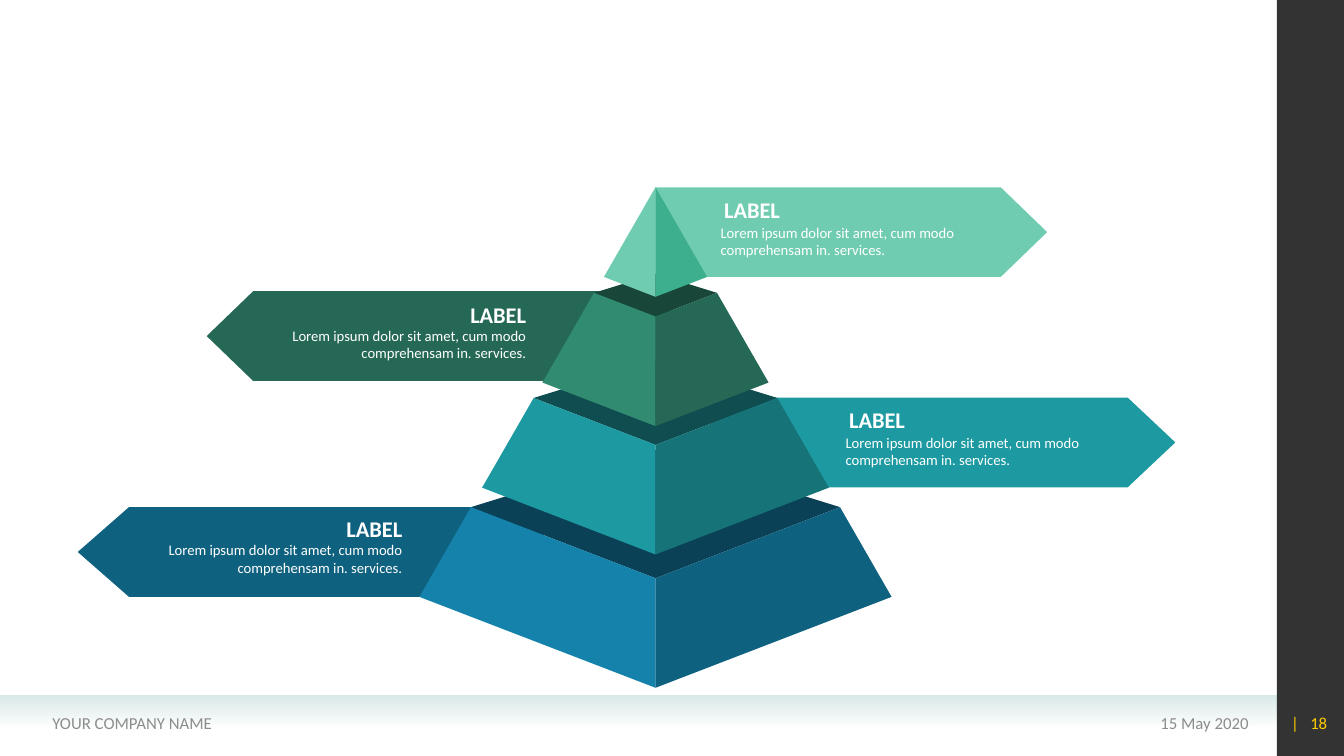
from lxml.etree import SubElement
from pptx import Presentation
from pptx.dml.color import RGBColor
from pptx.enum.shapes import MSO_SHAPE as Preset
from pptx.enum.text import MSO_ANCHOR as Anchor, PP_ALIGN as Align
from pptx.oxml.ns import qn
from pptx.util import Cm, Pt

WHITE = RGBColor(0xFF, 0xFF, 0xFF)
BLACK = RGBColor(0x00, 0x00, 0x00)
MIST = RGBColor(0xD9, 0xE9, 0xE8)
GREY = RGBColor(0x8C, 0x8C, 0x8C)
YELLOW = RGBColor(0xFF, 0xCC, 0x00)
MINT = RGBColor(0x70, 0xCC, 0xB1)
DEEP_MINT = RGBColor(0x3E, 0xAF, 0x8E)
GREEN = RGBColor(0x31, 0x8B, 0x71)
DEEP_GREEN = RGBColor(0x25, 0x68, 0x55)
DARK_GREEN = RGBColor(0x18, 0x46, 0x39)
TEAL = RGBColor(0x1D, 0x9A, 0xA1)
DEEP_TEAL = RGBColor(0x16, 0x74, 0x79)
DARK_TEAL = RGBColor(0x0F, 0x4D, 0x50)
BLUE = RGBColor(0x14, 0x82, 0xAB)
DEEP_BLUE = RGBColor(0x0F, 0x61, 0x80)
DARK_BLUE = RGBColor(0x0A, 0x41, 0x56)

presentation = Presentation()
presentation.slide_width = Cm(33.87)
presentation.slide_height = Cm(19.05)
slide = presentation.slides.add_slide(presentation.slide_layouts[6])
shapes = slide.shapes


def add_polygon(points, color):
    corners = [(Cm(x), Cm(y)) for x, y in points]
    builder = shapes.build_freeform(*corners[0])
    builder.add_line_segments(corners[1:], close=True)
    shape = builder.convert_to_shape()
    shape.shadow.inherit = False
    shape.fill.solid()
    shape.fill.fore_color.rgb = color
    shape.line.fill.background()


def add_text(box, text, size, color, align, anchor=Anchor.MIDDLE, bold=False, wrap=True):
    frame = shapes.add_textbox(*[Cm(length) for length in box]).text_frame
    frame.word_wrap = wrap
    frame.vertical_anchor = anchor
    frame.text = text
    paragraph = frame.paragraphs[0]
    paragraph.alignment = align
    font = paragraph.runs[0].font
    font.name, font.size, font.bold = "Calibri", Pt(size), bold
    font.color.rgb = color


# Footer band fading downwards, and dark side bar
footer_band = shapes.add_shape(Preset.RECTANGLE, 0, Cm(17.52), Cm(32.18), Cm(0.8))
footer_band.fill.gradient()
footer_band.fill.gradient_angle = 270
for stop, position in zip(footer_band.fill.gradient_stops, (0, 1)):
    stop.color.rgb = MIST
    stop.position = position
side_bar = shapes.add_shape(Preset.RECTANGLE, Cm(32.18), 0, Cm(1.69), Cm(19.05))
side_bar.fill.solid()
side_bar.fill.fore_color.rgb = BLACK
for shape, opacity in ((footer_band, "0"), (side_bar, "80000")):
    shape.shadow.inherit = False
    shape.line.fill.background()
    last_color = list(shape.fill._xPr.iter(qn("a:srgbClr")))[-1]
    SubElement(last_color, qn("a:alpha"), val=opacity)

# Footer texts: left, width, text, colour, alignment
for left, width, text, color, align in (
    (23.11, 8.61, "15 May 2020", GREY, Align.RIGHT),
    (1.07, 12.45, "YOUR COMPANY NAME", GREY, Align.LEFT),
    (32, 1.7, "|   18", YELLOW, Align.RIGHT),
):
    add_text((left, 17.7, width, 1.02), text, 12, color, align)

# Banners: inner edge, shoulder, tip, top, colour
BANNER_HEIGHT = 2.26
for inner, shoulder, tip, top, color in (
    (13.67, 3.25, 1.96, 12.78, DEEP_BLUE),
    (16.92, 6.38, 5.21, 7.34, DEEP_GREEN),
    (17.91, 28.42, 29.62, 10.02, TEAL),
    (16.52, 25.22, 26.39, 4.72, MINT),
):
    bottom = top + BANNER_HEIGHT
    add_polygon([(inner, top), (shoulder, top), (tip, top + BANNER_HEIGHT / 2),
                 (shoulder, bottom), (inner, bottom)], color)

# Pyramid tiers, lowest first: shoulder height, half width there, face and lid colours
CENTER = 16.52
TIER_HEIGHT = 2.26
TIER_FLARE = 1.3
FRONT_SLOPE = 0.385
BACK_SLOPE = 0.31
for top, half, left_color, right_color, lid_color in (
    (12.78, 4.65, BLUE, DEEP_BLUE, DARK_BLUE),
    (10.03, 3.07, TEAL, DEEP_TEAL, DARK_TEAL),
    (7.38, 1.55, GREEN, DEEP_GREEN, DARK_GREEN),
    (4.72, 0, MINT, DEEP_MINT, None),
):
    base_half = half + TIER_FLARE
    base = top + TIER_HEIGHT
    front_top = (CENTER, top + half * FRONT_SLOPE)
    front_base = (CENTER, base + base_half * FRONT_SLOPE)
    if lid_color:
        add_polygon([(CENTER, top - half * BACK_SLOPE), (CENTER - half, top),
                     front_top, (CENTER + half, top)], lid_color)
    for side, color in ((1, right_color), (-1, left_color)):
        add_polygon([(CENTER + side * half, top), front_top, front_base,
                     (CENTER + side * base_half, base)], color)

# Banner texts: left and top of the description, alignment
TEXT_WIDTH = 7.44
LABEL_WIDTH = 2.24
for left, top, align in (
    (2.95, 13.51, Align.RIGHT),
    (6.07, 8.1, Align.RIGHT),
    (17.91, 5.51, Align.LEFT),
    (21.06, 10.8, Align.LEFT),
):
    add_text((left, top, TEXT_WIDTH, 1.14),
             "Lorem ipsum dolor sit amet, cum modo comprehensam in. services.",
             10.5, WHITE, align, Anchor.TOP)
    if align == Align.RIGHT:
        label_left, label_top = left + TEXT_WIDTH - LABEL_WIDTH, top - 0.65
    else:
        label_left, label_top = left + 0.09, top - 0.7
    add_text((label_left, label_top, LABEL_WIDTH, 0.94), "LABEL", 16, WHITE, align,
             bold=True, wrap=False)

presentation.save("out.pptx")
